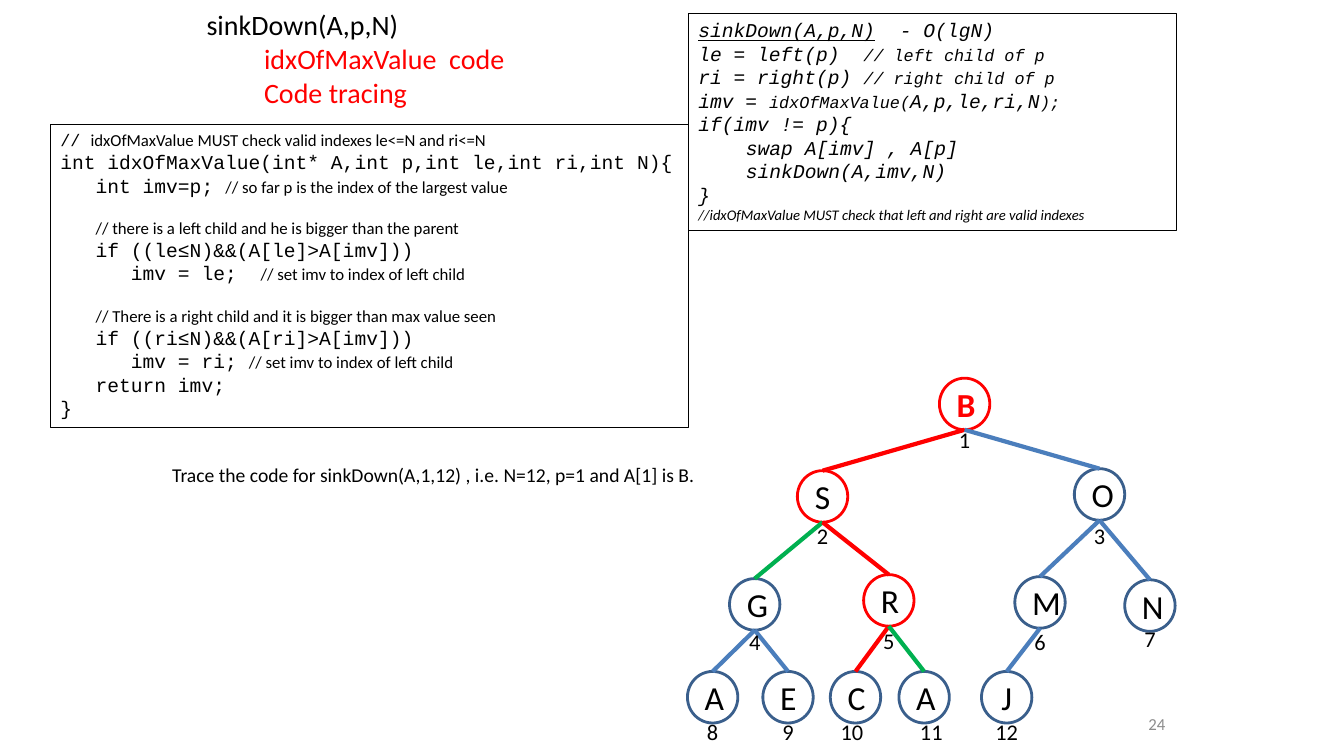
from lxml import etree
from pptx import Presentation
from pptx import util as u
from pptx.dml import color
from pptx.enum import shapes, text
from pptx.oxml import ns

BLACK = color.RGBColor(0x00, 0x00, 0x00)
RED = color.RGBColor(0xFF, 0x00, 0x00)
GREEN = color.RGBColor(0x00, 0xB0, 0x50)
BLUE = color.RGBColor(0x4B, 0x7E, 0xBC)
NAVY = color.RGBColor(0x3A, 0x5F, 0x8C)
GREY = color.RGBColor(0x8C, 0x8C, 0x8C)
SANS, MONO = "Calibri", "Courier New"
CODE, SMALL, NOTE, FINE = (MONO, 14), (MONO, 12), (SANS, 12), (SANS, 10.5)
NODE_WIDTH, NODE_HEIGHT = 1.27, 1.3
LEFT, CENTER, RIGHT = text.PP_ALIGN.LEFT, text.PP_ALIGN.CENTER, text.PP_ALIGN.RIGHT

INDEX_OF_MAX = [
    (0, 0, [("// ", SMALL), ("idxOfMaxValue MUST check valid indexes le<=N and ri<=N", NOTE)]),
    (0, 0, [("int idxOfMaxValue(int* A,int p,int le,int ri,int N){", CODE)]),
    (0.89, 0, [("int imv=p; ", CODE), ("// so far p is the index of the largest value", NOTE)]),
    (0.89, 14.6, [("// there is a left child and he is bigger than the parent", NOTE)]),
    (0.89, 0, [("if ((le≤N)&&(A[le]>A[imv]))", CODE)]),
    (1.78, 0, [("imv = le;  ", CODE), ("// set imv to index of left child", NOTE)]),
    (0.89, 14.6, [("// There is a right child and it is bigger than max value seen", NOTE)]),
    (0.89, 0, [("if ((ri≤N)&&(A[ri]>A[imv]))", CODE)]),
    (1.78, 0, [("imv = ri; ", CODE), ("// set imv to index of left child", NOTE)]),
    (0.89, 0, [("return imv;", CODE)]),
    (0, 0, [("}", CODE)]),
]
SINK_DOWN = [
    (0, 0, [("sinkDown(A,p,N)", CODE), ("\t- O(lgN)", CODE)]),
    (0, 0, [("le = left(p)  ", CODE), ("// left child of p", SMALL)]),
    (0, 0, [("ri = right(p) ", CODE), ("// right child of p", SMALL)]),
    (0, 0, [("imv = ", CODE), ("idxOfMaxValue(", SMALL), ("A,p,le,ri,N", CODE), (");", SMALL)]),
    (0, 0, [("if(imv != p){", CODE)]),
    (1.2, 0, [("swap A[imv] , A[p]", CODE)]),
    (1.2, 0, [("sinkDown(A,imv,N)", CODE)]),
    (0, 0, [("}", CODE)]),
    (0, 0, [("//idxOfMaxValue MUST check that left and right are valid indexes", FINE)]),
]
# letter, node centre, node top, index centre, index top
HEAP = {
    1: ("B", 24.31, 9.53, 24.31, 10.62),
    2: ("S", 20.73, 11.86, 20.73, 13.03),
    3: ("O", 27.71, 11.81, 27.71, 13.03),
    4: ("G", 19.02, 14.58, 19.02, 15.7),
    5: ("R", 22.4, 14.48, 22.4, 15.67),
    6: ("M", 26.21, 14.53, 26.21, 15.7),
    7: ("N", 28.98, 14.61, 28.98, 15.62),
    8: ("A", 17.96, 16.92, 17.96, 17.98),
    9: ("E", 19.86, 16.92, 19.86, 17.98),
    10: ("C", 21.56, 16.92, 21.47, 17.96),
    11: ("A", 23.29, 16.92, 23.47, 17.96),
    12: ("J", 25.37, 16.92, 25.37, 17.98),
}
RED_NODES = {1, 2, 5}
EDGE_COLORS = {2: RED, 5: RED, 10: RED, 4: GREEN, 11: GREEN}


class HeapSlide:
    def __init__(self, deck):
        self.slide = deck.slides.add_slide(deck.slide_layouts[5])
        self.shapes = self.slide.shapes

    def style(self, run, font, size, ink=BLACK):
        run.font.name, run.font.size = font, u.Pt(size)
        run.font.color.rgb = ink

    def indent(self, paragraph, depth):
        properties = paragraph._p.get_or_add_pPr()
        properties.set("marL", str(u.Cm(depth)))
        properties.set("indent", "0")

    def title(self, wording, left, top, width, height):
        heading = self.shapes.title
        heading.left, heading.top = u.Cm(left), u.Cm(top)
        heading.width, heading.height = u.Cm(width), u.Cm(height)
        frame = heading.text_frame
        frame.text = wording
        frame.auto_size = text.MSO_AUTO_SIZE.NONE
        frame.vertical_anchor = text.MSO_ANCHOR.MIDDLE
        for position, paragraph in enumerate(frame.paragraphs):
            paragraph.alignment = LEFT
            self.indent(paragraph, 1.45 if position else 0)
            self.style(paragraph.runs[0], SANS, 20, RED if position else BLACK)

    def label(self, wording, left, top, width, height, size, align=LEFT, ink=BLACK, wrap=True):
        box = self.shapes.add_textbox(u.Cm(left), u.Cm(top), u.Cm(width), u.Cm(height))
        frame = box.text_frame
        frame.word_wrap = wrap
        frame.text = wording
        frame.paragraphs[0].alignment = align
        self.style(frame.paragraphs[0].runs[0], SANS, size, ink)
        return box

    def outline(self, kind, left, top, width, height, ink, weight):
        figure = self.shapes.add_shape(kind, u.Cm(left), u.Cm(top), u.Cm(width), u.Cm(height))
        figure.shadow.inherit = False
        figure.fill.background()
        figure.line.color.rgb = ink
        figure.line.width = u.Pt(weight)
        return figure

    def listing(self, lines, left, top, width, height, italic=False):
        frame = self.outline(shapes.MSO_SHAPE.RECTANGLE, left, top, width, height, BLACK, 0.75).text_frame
        frame.word_wrap = True
        frame.vertical_anchor = text.MSO_ANCHOR.TOP
        for position, (depth, gap, pieces) in enumerate(lines):
            paragraph = frame.add_paragraph() if position else frame.paragraphs[0]
            paragraph.alignment = LEFT
            paragraph.space_before = u.Pt(gap)
            self.indent(paragraph, depth)
            for wording, (font, size) in pieces:
                run = paragraph.add_run()
                run.text = wording
                run.font.italic = italic
                self.style(run, font, size)
        return frame

    def tab_stop(self, paragraph, distance):
        stops = etree.SubElement(paragraph._p.get_or_add_pPr(), ns.qn("a:tabLst"))
        etree.SubElement(stops, ns.qn("a:tab"), pos=str(u.Cm(distance)), algn="l")

    def node(self, letter, center, top, ring, ink, bold):
        circle = self.outline(shapes.MSO_SHAPE.OVAL, center - NODE_WIDTH / 2, top,
                              NODE_WIDTH, NODE_HEIGHT, ring, 2)
        frame = circle.text_frame
        frame.text = letter
        frame.vertical_anchor = text.MSO_ANCHOR.MIDDLE
        frame.paragraphs[0].alignment = CENTER
        run = frame.paragraphs[0].runs[0]
        self.style(run, SANS, 24, ink)
        run.font.bold = bold
        return circle

    def edge(self, parent, child, ink):
        branch = self.shapes.add_connector(
            shapes.MSO_CONNECTOR.STRAIGHT, parent.left + parent.width // 2,
            parent.top + parent.height, child.left + child.width // 2, child.top)
        branch.end_connect(child, 0)
        branch.line.color.rgb = ink
        branch.line.width = u.Pt(3)
        etree.SubElement(branch._element.spPr, ns.qn("a:effectLst"))


def main():
    deck = Presentation()
    deck.slide_width, deck.slide_height = u.Cm(33.87), u.Cm(19.05)
    page = HeapSlide(deck)
    page.title("sinkDown(A,p,N)\nidxOfMaxValue  code\nCode tracing", 4.95, 0.2, 10.29, 2.54)
    number = page.label("24", 23.7, 17.73, 5.92, 1.02, 12, RIGHT, GREY)
    number.text_frame.vertical_anchor = text.MSO_ANCHOR.MIDDLE
    page.listing(INDEX_OF_MAX, 1.27, 3.15, 16.08, 7.62)
    page.label("Trace the code for sinkDown(A,1,12) , i.e. N=12, p=1 and A[1] is B.",
               4.09, 11.53, 13.94, 0.86, 14)
    signature = page.listing(SINK_DOWN, 17.35, 0.33, 12.29, 5.49, italic=True).paragraphs[0]
    signature.runs[0].font.underline = True
    page.tab_stop(signature, 5.95)

    nodes = {}
    for index, (letter, center, top, _, _) in HEAP.items():
        root = index == 1
        nodes[index] = page.node(letter, center, top, RED if index in RED_NODES else NAVY,
                                 RED if root else BLACK, root)
    for index in range(2, len(HEAP) + 1):
        page.edge(nodes[index // 2], nodes[index], EDGE_COLORS.get(index, BLUE))
    for index, (_, _, _, center, top) in HEAP.items():
        width = 0.81 if index < 10 else 1.09
        page.label(str(index), center - width / 2, top, width, 0.94, 16, CENTER, wrap=False)
    deck.save("out.pptx")


if __name__ == "__main__":
    main()
